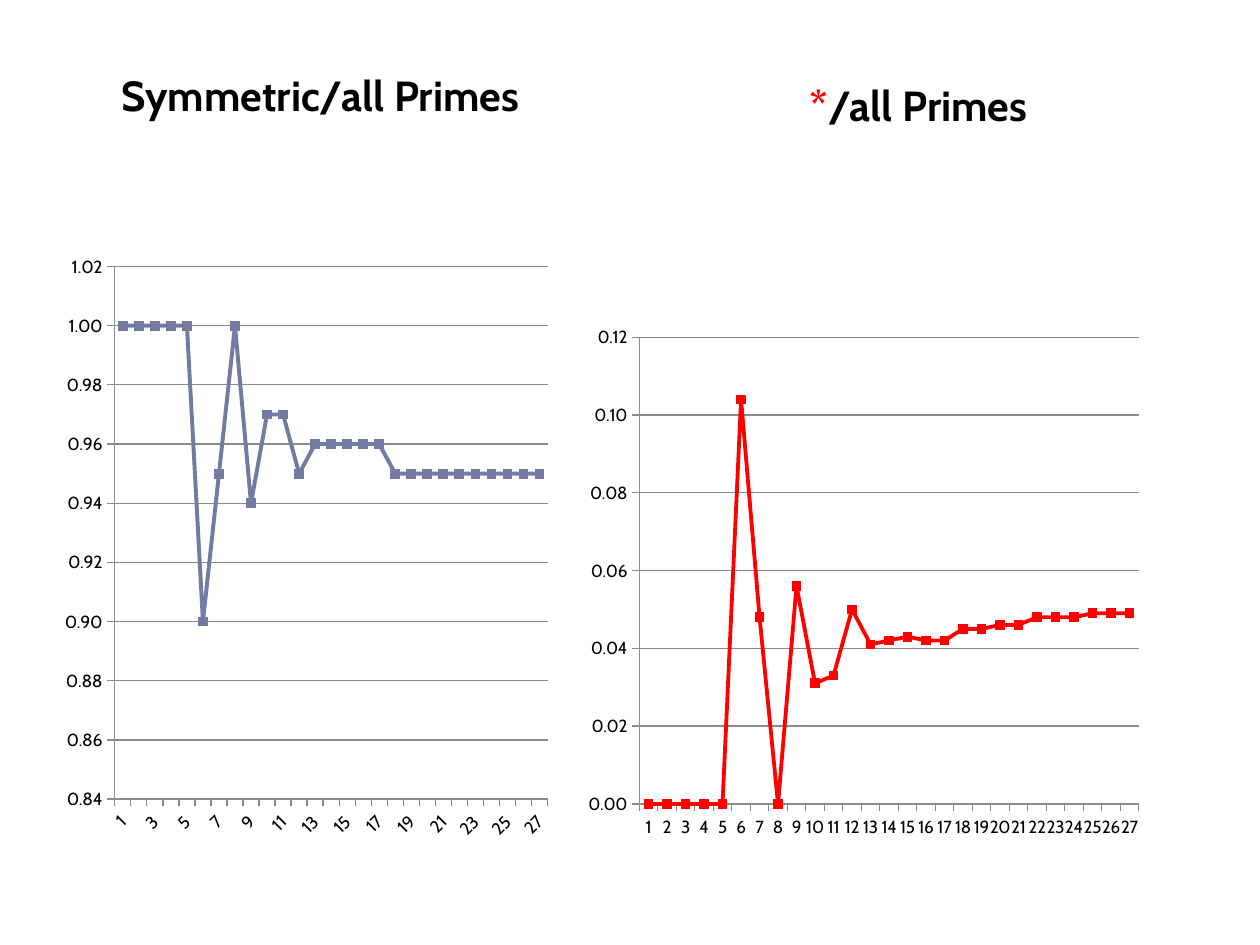
from pptx import Presentation
from pptx.chart.data import CategoryChartData
from pptx.dml.color import RGBColor
from pptx.enum.chart import XL_CHART_TYPE, XL_MARKER_STYLE, XL_TICK_MARK
from pptx.enum.text import MSO_ANCHOR, PP_ALIGN
from pptx.oxml import parse_xml
from pptx.oxml.ns import nsdecls
from pptx.util import Cm, Pt

BLACK = RGBColor(0x00, 0x00, 0x00)
RED = RGBColor(0xFF, 0x00, 0x00)
SLATE = RGBColor(0x72, 0x7C, 0xA3)
GREY = RGBColor(0x8B, 0x8B, 0x8B)
FACE = "Cabin"
LINE = XL_CHART_TYPE.LINE_MARKERS
SQUARE = XL_MARKER_STYLE.SQUARE
OUT = XL_TICK_MARK.OUTSIDE
CENTER = PP_ALIGN.CENTER
BOTTOM = MSO_ANCHOR.BOTTOM

SYMM = [1] * 5 + [0.9, 0.95, 1, 0.94, 0.97, 0.97, 0.95] + [0.96] * 5 + [0.95] * 10
STAR = [0] * 5 + [0.104, 0.048, 0, 0.056, 0.031, 0.033, 0.05, 0.041, 0.042,
                  0.043, 0.042, 0.042, 0.045, 0.045, 0.046, 0.046] + [0.048] * 3 + [0.049] * 3


def style(font, size, color=BLACK, bold=False):
    """Set the face, size, colour and weight of a font."""
    font.name, font.size, font.bold = FACE, Pt(size), bold
    font.color.rgb = color


def write(para, text, **form):
    """Add a run of text in the given format."""
    run = para.add_run()
    run.text = text
    style(run.font, **form)


def title(slide, box, parts):
    """Place a centred heading made of (text, colour) parts."""
    frame = slide.shapes.add_textbox(*map(Cm, box)).text_frame
    frame.word_wrap = True
    frame.vertical_anchor = BOTTOM
    para = frame.paragraphs[0]
    para.alignment = CENTER
    para.space_before = Pt(6)
    for text, color in parts:
        write(para, text, size=24, color=color, bold=True)


def layout(chart, plot):
    """Fix the inner plot area as fractions of the chart."""
    area = chart._chartSpace.chart.plotArea
    for old in area.findall("{*}layout"):
        area.remove(old)
    sizes = "".join(f'<c:{key} val="{val}"/>' for key, val in zip("xywh", plot))
    area.insert(0, parse_xml(
        f'<c:layout {nsdecls("c")}><c:manualLayout><c:layoutTarget val="inner"/>'
        f'<c:xMode val="edge"/><c:yMode val="edge"/>{sizes}</c:manualLayout></c:layout>'))


def graph(slide, box, vals, color, plot, scale):
    """Place a line chart of values with a (low, high) scale."""
    data = CategoryChartData(number_format="0.00")
    data.categories = [str(num) for num in range(1, len(vals) + 1)]
    data.add_series("Series 1", vals)
    chart = slide.shapes.add_chart(LINE, *map(Cm, box), data).chart
    chart.has_legend = chart.has_title = False
    style(chart.font, 10)
    layout(chart, plot)
    axis = chart.value_axis
    axis.minimum_scale, axis.maximum_scale = scale
    axis.major_unit = 0.02
    axis.tick_labels.number_format = "0.00"
    axis.tick_labels.number_format_is_linked = False
    axis.has_major_gridlines = True
    for part in (axis, chart.category_axis):
        part.major_tick_mark = OUT
    for part in (axis, chart.category_axis, axis.major_gridlines):
        part.format.line.color.rgb = GREY
        part.format.line.width = Pt(0.75)
    line = chart.plots[0].series[0]
    line.smooth = False
    line.format.line.color.rgb = color
    line.format.line.width = Pt(2.25)
    mark = line.marker
    mark.style, mark.size = SQUARE, 5
    mark.format.fill.solid()
    mark.format.fill.fore_color.rgb = color
    mark.format.line.color.rgb = color


def main():
    """Build and save the slide."""
    deck = Presentation()
    deck.slide_width, deck.slide_height = Cm(25.4), Cm(19.05)
    slide = deck.slides.add_slide(deck.slide_layouts[6])
    title(slide, (0.84, 0.64, 11.23, 1.9), [("Symmetric/all Primes", BLACK)])
    title(slide, (12.9, 0.84, 11.23, 1.9), [("*", RED), ("/all Primes", BLACK)])
    graph(slide, (1.27, 3.6, 11.23, 13.54), SYMM, SLATE,
          (0.093, 0.131, 0.777, 0.793), (0.84, 1.02))
    graph(slide, (11.86, 5.72, 13.34, 11.23), STAR, RED,
          (0.05, 0.096, 0.777, 0.838), (0, 0.12))
    deck.save("out.pptx")


if __name__ == "__main__":
    main()
